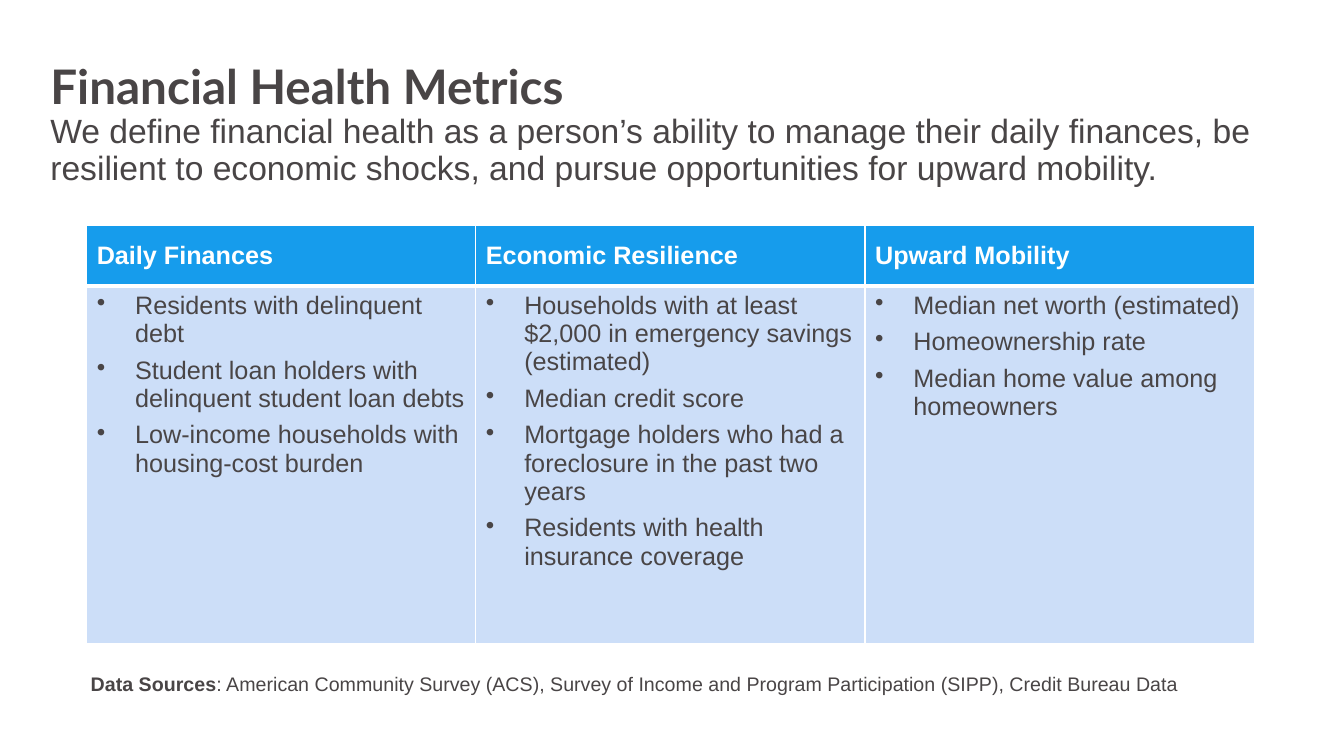
from dataclasses import dataclass

import lxml.etree
import pptx
import pptx.dml.color
import pptx.enum.text
import pptx.oxml.ns
import pptx.util

SLIDE_W, SLIDE_H = 13.33, 7.5
ANCHOR = pptx.enum.text.MSO_ANCHOR


@dataclass(frozen=True)
class Theme:
    ink: str = "494546"
    white: str = "FFFFFF"
    header: str = "169CEC"
    body: str = "CCDEF8"
    heading_font: str = "Lato"
    text_font: str = "Arial"
    title_size: int = 34
    lead_size: int = 24
    table_size: int = 18
    source_size: int = 14
    bullet_gap: int = 6
    bullet_indent: float = 0.38
    thin_rule: int = 1
    thick_rule: int = 3


THEME = Theme()

TITLE = "Financial Health Metrics"
LEAD = (
    "We define financial health as a person’s ability to manage their daily finances, "
    "be resilient to economic shocks, and pursue opportunities for upward mobility."
)
METRICS = {
    "Daily Finances": [
        "Residents with delinquent debt",
        "Student loan holders with delinquent student loan debts",
        "Low-income households with housing-cost burden",
    ],
    "Economic Resilience": [
        "Households with at least $2,000 in emergency savings (estimated)",
        "Median credit score",
        "Mortgage holders who had a foreclosure in the past two years",
        "Residents with health insurance coverage",
    ],
    "Upward Mobility": [
        "Median net worth (estimated)",
        "Homeownership rate",
        "Median home value among homeowners",
    ],
}
SOURCES = (
    ": American Community Survey (ACS), Survey of Income and Program Participation (SIPP), "
    "Credit Bureau Data"
)


def inches(value):
    return pptx.util.Inches(value)


def rgb(value):
    return pptx.dml.color.RGBColor.from_string(value)


def add_run(p, text, size, color=THEME.ink, bold=False, font=THEME.text_font):
    r = p.add_run()
    r.text = text
    r.font.name = font
    r.font.size = pptx.util.Pt(size)
    r.font.bold = bold
    r.font.color.rgb = rgb(color)


def add_text_box(s, left, top, width, height, inset_top, inset_bottom):
    """Add a wrapping box without side insets and return its first paragraph."""
    tf = s.shapes.add_textbox(*map(inches, (left, top, width, height))).text_frame
    tf.word_wrap = True
    tf.vertical_anchor = ANCHOR.TOP
    tf.margin_left = tf.margin_right = 0
    tf.margin_top, tf.margin_bottom = inches(inset_top), inches(inset_bottom)
    return tf.paragraphs[0]


def set_bullet(p):
    pPr = p._p.get_or_add_pPr()
    indent = inches(THEME.bullet_indent)
    pPr.set("marL", str(indent))
    pPr.set("indent", str(-indent))
    bullet = lxml.etree.SubElement(pPr, pptx.oxml.ns.qn("a:buChar"))
    bullet.set("char", "•")


def style_cell(cell, fill, anchor, rules):
    """Draw white rules on the given sides, then fill the cell."""
    tcPr = cell._tc.get_or_add_tcPr()
    for side, width in rules.items():
        ln = lxml.etree.SubElement(tcPr, pptx.oxml.ns.qn(f"a:ln{side}"))
        ln.set("w", str(pptx.util.Pt(width)))
        solid = lxml.etree.SubElement(ln, pptx.oxml.ns.qn("a:solidFill"))
        color = lxml.etree.SubElement(solid, pptx.oxml.ns.qn("a:srgbClr"))
        color.set("val", THEME.white)
    cell.fill.solid()
    cell.fill.fore_color.rgb = rgb(fill)
    cell.vertical_anchor = anchor


def add_metrics_table(s, left, top, col_width, row_heights):
    width = col_width * len(METRICS)
    frame = s.shapes.add_table(
        len(row_heights), len(METRICS), *map(inches, (left, top, width, sum(row_heights)))
    )
    table = frame.table
    for row, height in zip(table.rows, row_heights):
        row.height = inches(height)

    thin, thick = THEME.thin_rule, THEME.thick_rule
    for col, (heading, metrics) in enumerate(METRICS.items()):
        table.columns[col].width = inches(col_width)

        # Column heading
        head = table.cell(0, col)
        style_cell(head, THEME.header, ANCHOR.MIDDLE, {"L": thin, "R": thin, "T": thin, "B": thick})
        add_run(head.text_frame.paragraphs[0], heading, THEME.table_size, THEME.white, True)

        # Bulleted metrics
        body = table.cell(1, col)
        style_cell(body, THEME.body, ANCHOR.TOP, {"L": thin, "R": thin, "T": thick, "B": thin})
        tf = body.text_frame
        for i, metric in enumerate(metrics):
            p = tf.add_paragraph() if i else tf.paragraphs[0]
            if i:
                p.space_before = pptx.util.Pt(THEME.bullet_gap)
            set_bullet(p)
            add_run(p, metric, THEME.table_size)


def main():
    prs = pptx.Presentation()
    prs.slide_width, prs.slide_height = inches(SLIDE_W), inches(SLIDE_H)
    s = prs.slides.add_slide(prs.slide_layouts[6])

    # Title and definition
    p = add_text_box(s, 0.5, 0.58, SLIDE_W - 1, 1.27, 0.05, 0.05)
    p.line_spacing = 0.9
    add_run(p, TITLE, THEME.title_size, bold=True, font=THEME.heading_font)
    p.add_line_break()
    add_run(p, LEAD, THEME.lead_size)

    # Metrics by theme
    add_metrics_table(s, 0.86, 2.24, 3.86, (0.6, 3.54))

    # Data sources
    p = add_text_box(s, 0.9, 6.67, 10.88, 0.25, 0, 0.1)
    add_run(p, "Data Sources", THEME.source_size, bold=True)
    add_run(p, SOURCES, THEME.source_size)

    prs.save("out.pptx")


if __name__ == "__main__":
    main()
